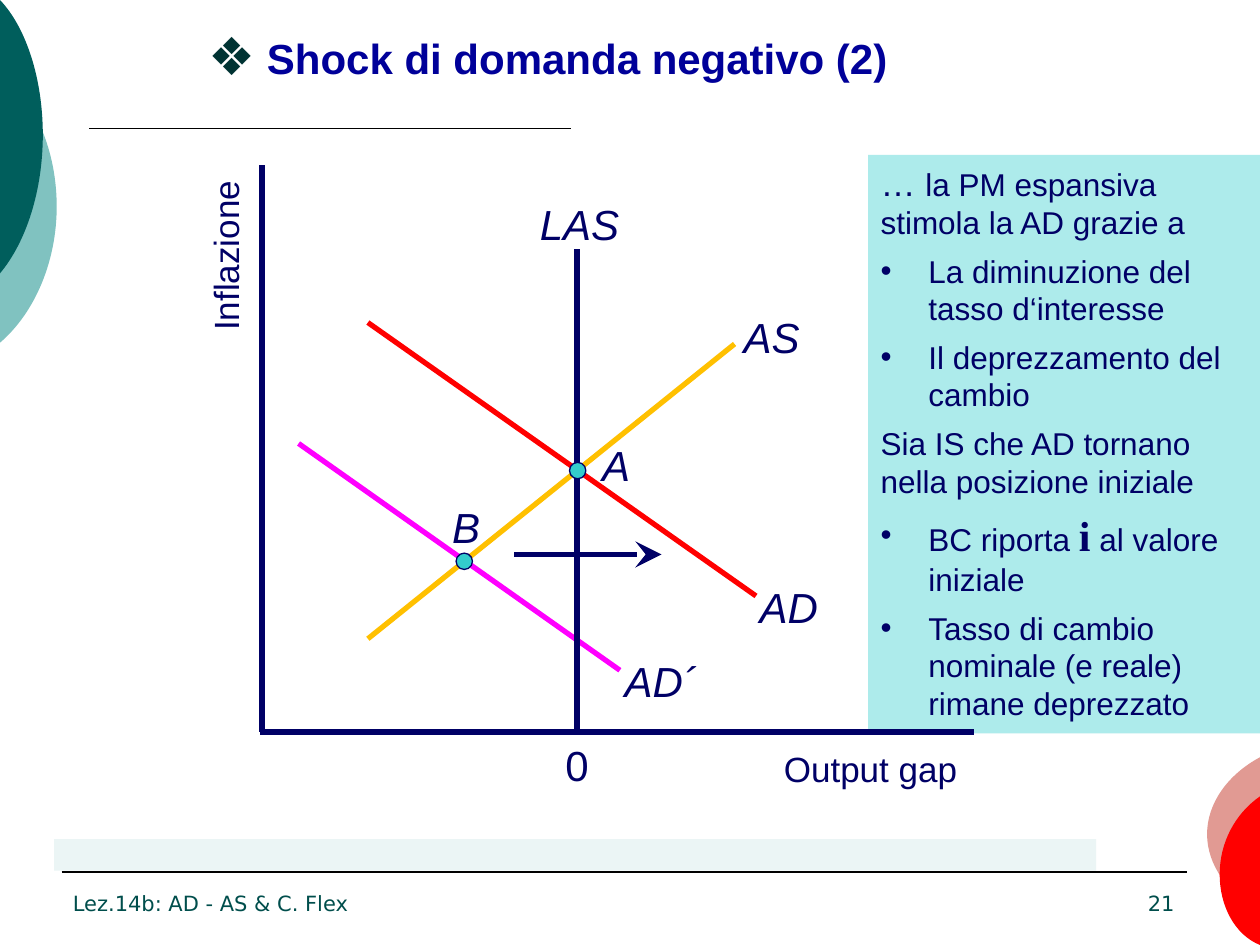
"""Build a slide on a negative demand shock in the AD-AS model."""
from lxml import etree
from pptx import Presentation
from pptx.dml.color import RGBColor
from pptx.enum.shapes import MSO_CONNECTOR, MSO_SHAPE
from pptx.enum.text import MSO_ANCHOR, PP_ALIGN
from pptx.oxml.ns import qn
from pptx.util import Inches, Pt

STRAIGHT = MSO_CONNECTOR.STRAIGHT
RECTANGLE, OVAL = MSO_SHAPE.RECTANGLE, MSO_SHAPE.OVAL
LEFT, CENTER, RIGHT = PP_ALIGN.LEFT, PP_ALIGN.CENTER, PP_ALIGN.RIGHT
TOP, BOTTOM = MSO_ANCHOR.TOP, MSO_ANCHOR.BOTTOM

COLORS = {
    "navy": "000066", "title": "000099", "title bullet": "003333", "footer": "004E4C",
    "black": "000000", "panel": "ADEBEB", "band": "EBF5F5", "point": "33CCCC",
    "AD": "FF0000", "AD´": "FF00FF", "AS": "FFC000",
    "pale teal": "80C2C0", "teal": "005E5C", "pale red": "E19A93", "red": "FF0000",
}

ORNAMENTS = [
    ("pale teal", (0, 0.55), [((0.28, 0.8), (0.45, 1.2), (0.45, 1.64)),
                              ((0.45, 2.07), (0.28, 2.48), (0, 2.72))]),
    ("teal", (0, 0), [((0.21, 0.22), (0.34, 0.63), (0.34, 1.07)),
                      ((0.34, 1.51), (0.21, 1.92), (0, 2.17))]),
    ("pale red", (10, 7.23), [((9.74, 7.09), (9.58, 6.86), (9.58, 6.62)),
                              ((9.58, 6.38), (9.74, 6.15), (10, 6.01))]),
    ("red", (10, 7.5), [((9.8, 7.42), (9.68, 7.19), (9.68, 6.94)),
                        ((9.68, 6.69), (9.8, 6.46), (10, 6.32))]),
]
RULES = [((0.71, 1.02), (4.53, 1.02), 1), ((0.49, 6.92), (9.42, 6.92), 0.75)]
CURVES = [
    ("AD´", "AD´", (2.37, 3.52), (4.92, 5.32), (4.67, 5.15, 1.15, 0.5)),
    ("LAS", "navy", (4.58, 1.98), (4.58, 5.82), (4.06, 1.53, 1.08, 0.5)),
    ("AD", "AD", (2.92, 2.56), (6, 4.73), (5.8, 4.57, 0.92, 0.5)),
    ("AS", "AS", (2.92, 5.07), (5.83, 2.73), (5.75, 2.42, 0.75, 0.5)),
]
AXES = [((2.08, 1.31), (2.08, 5.81)), ((2.06, 5.81), (7.73, 5.81))]
AXIS_LABELS = [
    ("Inflazione", (0.52, 1.81, 2.54, 0.44), 20, 270),
    ("0", (4.29, 5.82, 0.58, 0.5), 24, 0),
    ("Output gap", (5.16, 5.88, 3.5, 0.44), 20, 0),
]
POINTS = [("A", (4.52, 3.67), (4.6, 3.44, 0.58, 0.5)),
          ("B", (3.62, 4.39), (3.41, 3.93, 0.58, 0.5))]
POINT_SIZE = 0.13
SHIFT_ARROW = ((4.08, 4.4), (5.25, 4.4))
PANEL = (6.89, 1.23, 3.11, 4.59)
BAND = (0.43, 6.66, 8.27, 0.25)
PLAIN, LARGE, VARIABLE = ("Arial", 18, False), ("Arial", 20, False), ("Times New Roman", 24, True)
NOTES = [
    (False, [("… ", LARGE), ("la PM espansiva stimola la AD grazie a", PLAIN)]),
    (True, [("La diminuzione del tasso d‘interesse", PLAIN)]),
    (True, [("Il deprezzamento del cambio", PLAIN)]),
    (False, [("Sia IS che AD tornano nella posizione iniziale", PLAIN)]),
    (True, [("BC riporta ", PLAIN), ("i", VARIABLE), (" al valore iniziale", PLAIN)]),
    (True, [("Tasso di cambio nominale (e reale) rimane deprezzato", PLAIN)]),
]
TITLE = ("Shock di domanda negativo (2)", (0.75, 0.21, 9.25, 0.5))
FOOTERS = [("Lez.14b: AD - AS & C. Flex", (0.48, 7.06, 4.99, 0.26), LEFT),
           ("21", (8.15, 6.82, 1.27, 0.5), RIGHT)]


def color(name):
    return RGBColor.from_string(COLORS[name])


def inches(values):
    return [Inches(value) for value in values]


def style_font(font, name, size, color_name, bold=False, italic=False):
    font.name, font.size, font.bold, font.italic = name, Pt(size), bold, italic
    font.color.rgb = color(color_name)


def add_line(page, start, end, color_name, width=3, arrow=False):
    line = page.shapes.add_connector(STRAIGHT, *inches(start + end))
    line.line.color.rgb = color(color_name)
    line.line.width = Pt(width)
    if arrow:
        etree.SubElement(line.line._get_or_add_ln(), qn("a:tailEnd"), type="stealth",
                         w="lg", len="lg")
    etree.SubElement(line._element.spPr, qn("a:effectLst"))


def paint(shape, fill, outline=None):
    shape.shadow.inherit = False
    shape.fill.solid()
    shape.fill.fore_color.rgb = color(fill)
    if outline:
        shape.line.color.rgb = color(outline)
        shape.line.width = Pt(0.75)
    else:
        shape.line.fill.background()


def add_shape(page, kind, place, fill, outline=None):
    shape = page.shapes.add_shape(kind, *inches(place))
    paint(shape, fill, outline)
    return shape


def add_text(page, text, place, size, color_name="navy", name="Arial", align=CENTER,
             anchor=TOP, bold=False, italic=False, rotation=0):
    box = page.shapes.add_textbox(*inches(place))
    box.rotation = rotation
    box.text_frame.word_wrap = True
    box.text_frame.vertical_anchor = anchor
    para = box.text_frame.paragraphs[0]
    para.text, para.alignment = text, align
    style_font(para.font, name, size, color_name, bold, italic)
    return para


def add_bullet(para, symbol, margin, hanging, color_name, percent=100):
    properties = para._p.get_or_add_pPr()
    properties.set("marL", str(Inches(margin)))
    properties.set("indent", str(-Inches(hanging)))
    bullet_color = etree.Element(qn("a:buClr"))
    etree.SubElement(bullet_color, qn("a:srgbClr"), val=COLORS[color_name])
    parts = [bullet_color,
             etree.Element(qn("a:buSzPct"), val=str(percent * 1000)),
             etree.Element(qn("a:buFont"), typeface="Arial"),
             etree.Element(qn("a:buChar"), char=symbol)]
    position = len(properties.findall(qn("a:spcBef")))
    properties[position:position] = parts


def add_ornament(page, fill, start, curves):
    builder = page.shapes.build_freeform(*inches(start))
    builder.add_line_segments([inches(curve[-1]) for curve in curves], close=True)
    shape = builder.convert_to_shape()
    segments = list(shape._element.iter(qn("a:lnTo")))
    for segment, curve in zip(segments, curves):
        bend = etree.Element(qn("a:cubicBezTo"))
        for x, y in curve:
            etree.SubElement(bend, qn("a:pt"), x=str(Inches(x) - shape.left),
                             y=str(Inches(y) - shape.top))
        segment.getparent().replace(segment, bend)
    paint(shape, fill)


def add_notes(page):
    frame = add_shape(page, RECTANGLE, PANEL, "panel").text_frame
    frame.word_wrap = True
    frame.vertical_anchor = TOP
    for index, (bulleted, spans) in enumerate(NOTES):
        para = frame.add_paragraph() if index else frame.paragraphs[0]
        para.alignment = LEFT
        para.space_before = Pt(6 if index else 0)
        for text, (name, size, bold) in spans:
            span = para.add_run()
            span.text = text
            style_font(span.font, name, size, "navy", bold)
        if bulleted:
            add_bullet(para, "•", 0.38, 0.38, "navy")


def main():
    deck = Presentation()
    deck.slide_width, deck.slide_height = Inches(10), Inches(7.5)
    page = deck.slides.add_slide(deck.slide_layouts[6])
    for ornament in ORNAMENTS:
        add_ornament(page, *ornament)
    for start, end, width in RULES:
        add_line(page, start, end, "black", width)
    for label, color_name, start, end, place in CURVES:
        add_line(page, start, end, color_name)
        add_text(page, label, place, 24, italic=True)
    add_notes(page)
    for start, end in AXES:
        add_line(page, start, end, "navy")
    for label, place, size, rotation in AXIS_LABELS:
        add_text(page, label, place, size, rotation=rotation)
    for label, corner, place in POINTS:
        add_shape(page, OVAL, corner + (POINT_SIZE, POINT_SIZE), "point", "navy")
        add_text(page, label, place, 24, italic=True)
    add_line(page, *SHIFT_ARROW, "navy", arrow=True)
    title = add_text(page, *TITLE, 24, "title", align=LEFT, bold=True)
    add_bullet(title, "❖", 1.27, 0.46, "title bullet", 125)
    add_shape(page, RECTANGLE, BAND, "band")
    for text, place, align in FOOTERS:
        add_text(page, text, place, 12, "footer", "DejaVu Sans", align, BOTTOM)
    deck.save("out.pptx")


if __name__ == "__main__":
    main()
